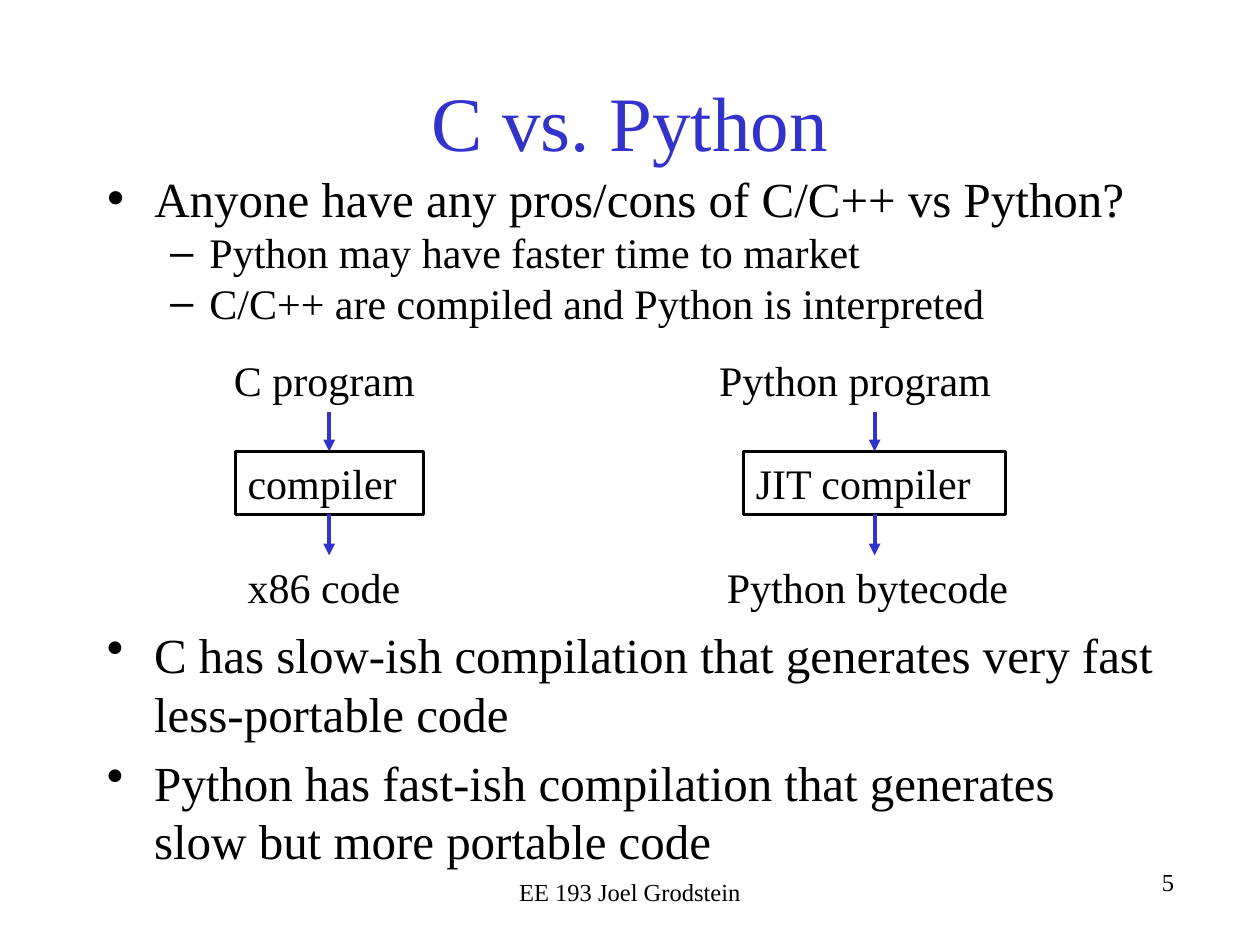
from lxml import etree
from pptx import Presentation, util as u
from pptx.dml.color import RGBColor
from pptx.enum import shapes as es, text as et
from pptx.oxml.ns import qn

UNIT = u.Inches(10) // 120
INK, BLUE = "000000", "3333CC"
LEFT, MID, RIGHT = et.PP_ALIGN.LEFT, et.PP_ALIGN.CENTER, et.PP_ALIGN.RIGHT
LEVELS = [("•", 28, 4.5, -4.5, 0.2), ("–", 24, 9.75, -3.75, 0)]


def grid(*cells):
    return [u.Emu(round(c * UNIT)) for c in cells]


def tint(color, code):
    color.rgb = RGBColor.from_string(code)


def style(para, size, code=INK, align=LEFT):
    para.alignment = align
    para.font.name = "Times New Roman"
    para.font.size = u.Pt(size)
    tint(para.font.color, code)


def place(shape, box):
    shape.left, shape.top, shape.width, shape.height = grid(*box)


def label(parent, box, words, size=24, align=LEFT):
    area = parent.add_textbox(*grid(*box))
    area.text_frame.word_wrap = True
    area.text_frame.text = words
    style(area.text_frame.paragraphs[0], size, align=align)
    return area


def title(shape, box, words):
    place(shape, box)
    frame = shape.text_frame
    frame.text = words
    frame.vertical_anchor = et.MSO_ANCHOR.MIDDLE
    frame.auto_size = et.MSO_AUTO_SIZE.NONE
    style(frame.paragraphs[0], 44, BLUE, MID)


def bullets(shape, box, items):
    place(shape, box)
    frame = shape.text_frame
    frame.word_wrap = True
    frame.auto_size = et.MSO_AUTO_SIZE.NONE
    frame.text = "\n".join(words for _, words in items)
    for para, (level, _) in zip(frame.paragraphs, items):
        mark, size, margin, indent, gap = LEVELS[level]
        para.level = level
        style(para, size)
        para.space_before = u.Pt(size * gap)
        props = para._p.get_or_add_pPr()
        for key, cells in (("marL", margin), ("indent", indent)):
            props.set(key, str(grid(cells)[0]))
        bullet = etree.Element(qn("a:buChar"), char=mark)
        props.insert_element_before(bullet, "a:tabLst", "a:defRPr", "a:extLst")


def arrow(parent, mid, top, bottom):
    line = parent.add_connector(
        es.MSO_CONNECTOR.STRAIGHT, *grid(mid, top, mid, bottom))
    line.line.width = u.Pt(2.25)
    tint(line.line.color, BLUE)
    etree.SubElement(line.line._get_or_add_ln(), qn("a:tailEnd"), type="triangle")
    etree.SubElement(line._element.spPr, qn("a:effectLst"))
    return line


def flow(slide, box, steps):
    left, top, width, height = box
    mid, row = left + width / 2, 6
    group = slide.shapes.add_group_shape().shapes
    tops = (top, top + 9.8, top + height - row)
    (start, wide), (tool, span), (result, room) = steps
    label(group, (mid - wide / 2, tops[0], wide, row), start)
    block = group.add_shape(
        es.MSO_SHAPE.RECTANGLE, *grid(mid - span / 2, tops[1], span, row))
    block.shadow.inherit = False
    block.fill.background()
    block.line.width = u.Pt(1.75)
    tint(block.line.color, INK)
    block.text_frame.text = tool
    style(block.text_frame.paragraphs[0], 24)
    label(group, (mid - room / 2, tops[2], room, row), result)
    arrow(group, mid, tops[0] + row, tops[1]).end_connect(block, 0)
    arrow(group, mid, tops[1] + row, tops[2]).begin_connect(block, 2)


def main():
    deck = Presentation()
    deck.slide_width, deck.slide_height = grid(120, 90)
    slide = deck.slides.add_slide(deck.slide_layouts[1])
    title(slide.shapes.title, (9, 4, 102, 15), "C vs. Python")
    bullets(slide.placeholders[1], (9, 15.4, 102, 21.2), [
        (0, "Anyone have any pros/cons of C/C++ vs Python?"),
        (1, "Python may have faster time to market"),
        (1, "C/C++ are compiled and Python is interpreted"),
    ])
    flow(slide, (21.1, 33.2, 20.5, 25.7), [
        ("C program", 20.5), ("compiler", 17.9), ("x86 code", 17.9)])
    flow(slide, (67.3, 33.2, 32, 25.7), [
        ("Python program", 32), ("JIT compiler", 25), ("Python bytecode", 30.5)])
    rest = slide.shapes.add_textbox(*grid(9, 58.9, 102, 21.2))
    bullets(rest, (9, 58.9, 102, 21.2), [
        (0, "C has slow-ish compilation that generates very fast less-portable code"),
        (0, "Python has fast-ish compilation that generates slow but more portable code"),
    ])
    label(slide.shapes, (41, 82.9, 38, 6), "EE 193 Joel Grodstein", 14, MID)
    label(slide.shapes, (75, 82, 38, 6), "5", 14, RIGHT)
    deck.save("out.pptx")


if __name__ == "__main__":
    main()
